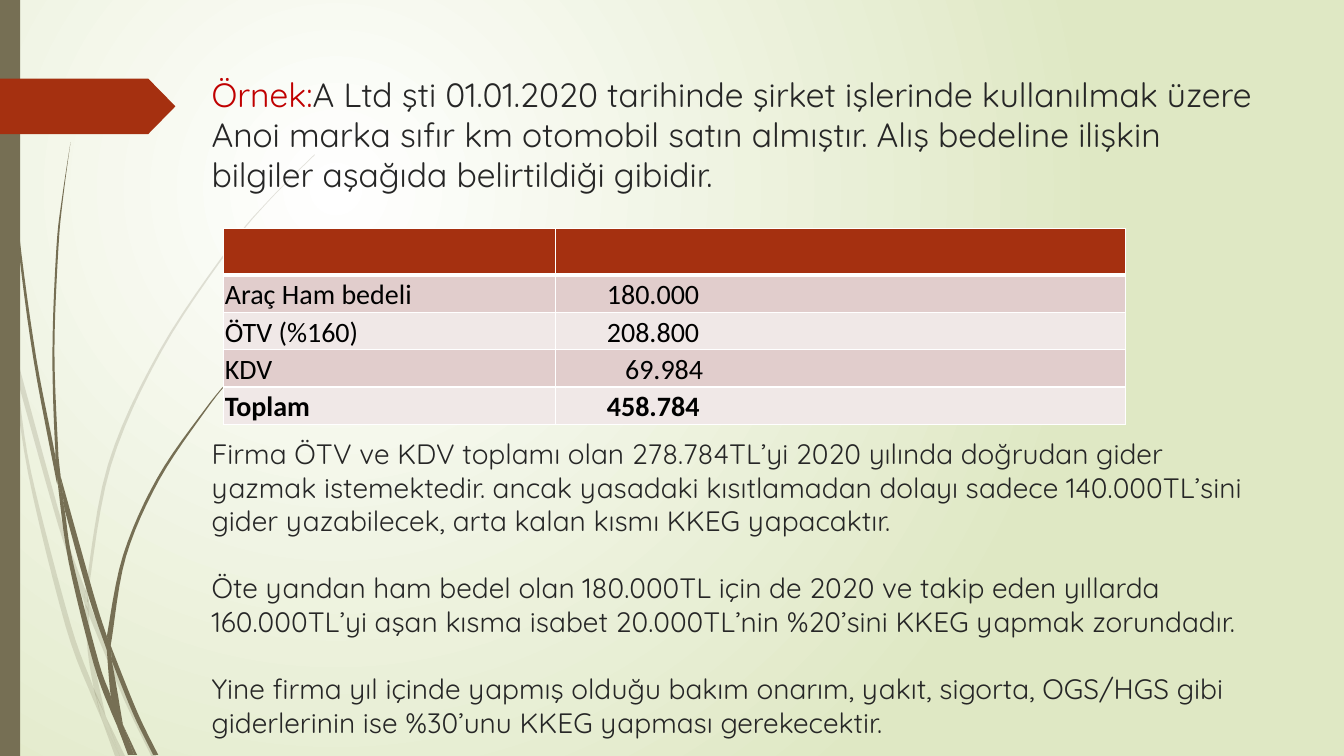
import pptx
import pptx.util
import pptx.dml.color
import pptx.enum.shapes
import pptx.enum.text
import pptx.oxml
import pptx.oxml.ns

RGB = pptx.dml.color.RGBColor
OLIVE = RGB(0x76, 0x6F, 0x54)
RUST = RGB(0xA5, 0x30, 0x10)
RED = RGB(0xC0, 0x00, 0x00)
INK = RGB(0x26, 0x26, 0x26)
BLACK = RGB(0x00, 0x00, 0x00)
BANDS = [RGB(0xE1, 0xCD, 0xCC), RGB(0xF0, 0xE8, 0xE7)]
EMU_PER_PX = 9144
WIDTH, HEIGHT = 1333, 750

# Content: size pt, line height pt, space before pt, runs
PARAGRAPHS = [
    (24, 28.8, 0, [
        ("Örnek:", RED),
        ("A Ltd şti 01.01.2020 tarihinde şirket işlerinde kullanılmak üzere "
         "Anoi marka sıfır km otomobil satın almıştır. Alış bedeline ilişkin "
         "bilgiler aşağıda belirtildiği gibidir.", INK)]),
    (20, 24, 172.8, [
        ("Firma ÖTV ve KDV toplamı olan 278.784TL’yi 2020 yılında doğrudan gider "
         "yazmak istemektedir. ancak yasadaki kısıtlamadan dolayı sadece "
         "140.000TL’sini gider yazabilecek, arta kalan kısmı KKEG yapacaktır.", INK)]),
    (20, 24, 24, [
        ("Öte yandan ham bedel olan 180.000TL için de 2020 ve takip eden yıllarda "
         "160.000TL’yi aşan kısma isabet 20.000TL’nin %20’sini KKEG yapmak "
         "zorundadır.", INK)]),
    (20, 24, 24, [
        ("Yine firma yıl içinde yapmış olduğu bakım onarım, yakıt, sigorta, OGS/HGS "
         "gibi giderlerinin ise %30’unu KKEG yapması gerekecektir.", INK)]),
]

# Label, amount, indent of the amount in px, bold
COSTS = [
    ("Araç Ham bedeli", "180.000", 51, False),
    ("ÖTV (%160)", "208.800", 51, False),
    ("KDV", "69.984", 69, False),
    ("Toplam", "458.784", 51, True),
]
COLUMN_WIDTHS = [329, 565]
HEADER_HEIGHT, ROW_HEIGHT = 46, 37

# Grass pieces: the two edges of each, as px points
PALE_GRASS = [
    ([(11, 350), (9, 322), (0, 282)], [(0, 299), (10, 344), (11, 350)]),
    ([(14, 345), (62, 520), (85, 586)], [(84, 599), (58, 522), (17, 376)]),
    ([(88, 596), (92, 607), (127, 692), (155, 750)], [(150, 750), (123, 694), (88, 610)]),
    ([(105, 711), (124, 750)], [(119, 750), (105, 711)]),
    ([(11, 350), (17, 376), (31, 469), (70, 619), (93, 683), (101, 714)],
     [(92, 693), (65, 621), (28, 470), (11, 350)]),
    ([(84, 599), (88, 608), (91, 646), (105, 711)],
     [(96, 692), (93, 683), (87, 646), (84, 599)]),
    ([(312, 153), (268, 197), (228, 244), (158, 348), (107, 461), (85, 584), (85, 586)],
     [(88, 596), (88, 584), (110, 462), (160, 349), (229, 245), (268, 198), (312, 154)]),
    ([(101, 714), (119, 750)], [(114, 750), (101, 714)]),
    ([(85, 586), (88, 596), (88, 610)], [(88, 608), (84, 599)]),
    ([(93, 683), (105, 711), (119, 750)], [(101, 714), (93, 683)]),
]
DARK_GRASS = [
    ([(4, 0), (5, 48), (8, 109), (19, 232), (36, 355), (55, 453), (57, 481)],
     [(56, 477), (33, 355), (17, 233), (7, 110), (4, 48), (3, 0)]),
    ([(60, 472), (93, 590), (106, 631)], [(106, 645), (88, 592), (64, 505)]),
    ([(110, 641), (136, 706), (157, 749)], [(152, 749), (132, 708), (111, 656)]),
    ([(57, 477), (64, 505), (72, 556), (98, 657), (110, 691), (117, 722)],
     [(111, 708), (93, 659), (68, 557), (57, 477)]),
    ([(70, 141), (62, 193), (56, 245), (52, 349), (55, 449), (60, 472)],
     [(58, 453), (54, 349), (58, 245), (63, 193), (70, 141)]),
    ([(122, 719), (136, 749)], [(133, 749), (122, 719)]),
    ([(55, 449), (60, 472), (64, 505)], [(57, 477), (55, 453)]),
    ([(260, 344), (231, 373), (204, 405), (156, 474), (122, 551), (106, 631)],
     [(110, 641), (111, 633), (125, 552), (158, 476), (205, 406), (231, 374), (261, 344)]),
    ([(117, 722), (131, 749)], [(127, 749), (117, 722)]),
    ([(106, 645), (111, 656), (122, 719)], [(116, 706), (110, 691), (106, 645)]),
    ([(106, 631), (110, 641), (111, 656)], [(106, 645), (106, 633)]),
    ([(110, 691), (122, 719), (133, 749)], [(130, 749), (117, 722), (110, 691)]),
]


def px(length):
    return pptx.util.Emu(round(length * EMU_PER_PX))


def paint(shape, color):
    shape.fill.solid()
    shape.fill.fore_color.rgb = color
    shape.line.fill.background()
    shape.shadow.inherit = False


def smooth_path(knots, steps=6):
    """Catmull-Rom curve through the knots."""
    ends = [knots[0]] + knots + [knots[-1]]
    path = []
    for a, b, c, d in zip(ends, ends[1:], ends[2:], ends[3:]):
        for step in range(steps):
            t = step / steps
            path.append(tuple(
                px((2 * q + (r - p) * t + (2 * p - 5 * q + 4 * r - s) * t ** 2
                    + (3 * q - p - 3 * r + s) * t ** 3) / 2)
                for p, q, r, s in zip(a, b, c, d)))
    return path + [tuple(px(value) for value in knots[-1])]


def add_grass(page, edges, opacity=None):
    outline = [point for edge in edges for point in smooth_path(edge)]
    builder = page.shapes.build_freeform(*outline[0], scale=1.0)
    builder.add_line_segments(outline[1:], close=True)
    grass = builder.convert_to_shape()
    paint(grass, OLIVE)
    if opacity:
        color = grass.fill._xPr.find(".//" + pptx.oxml.ns.qn("a:srgbClr"))
        color.append(pptx.oxml.parse_xml(
            f'<a:alpha {pptx.oxml.ns.nsdecls("a")} val="{opacity * 1000}"/>'))


def set_borders(cell, bottom):
    for i, (side, width) in enumerate((("L", 1), ("R", 1), ("T", 1), ("B", bottom))):
        cell._tc.get_or_add_tcPr().insert(i, pptx.oxml.parse_xml(
            f'<a:ln{side} {pptx.oxml.ns.nsdecls("a")} w="{width * 12700}">'
            f'<a:solidFill><a:srgbClr val="FFFFFF"/></a:solidFill></a:ln{side}>'))


def add_span(para, text, font, size, color, bold=False):
    span = para.add_run()
    span.text = text
    span.font.name = font
    span.font.size = pptx.util.Pt(size)
    span.font.bold = bold
    span.font.color.rgb = color


deck = pptx.Presentation()
deck.slide_width, deck.slide_height = px(WIDTH), px(HEIGHT)
page = deck.slides.add_slide(deck.slide_layouts[6])

# Background glow
page._element.cSld.insert(0, pptx.oxml.parse_xml(
    f'<p:bg {pptx.oxml.ns.nsdecls("p", "a")}><p:bgPr><a:gradFill><a:gsLst>'
    '<a:gs pos="0"><a:srgbClr val="FFFFFF"/></a:gs>'
    '<a:gs pos="100000"><a:srgbClr val="DFE8C4"/></a:gs></a:gsLst>'
    '<a:path path="circle"><a:fillToRect l="50000" t="50000" r="100000" b="100000"/>'
    '</a:path></a:gradFill><a:effectLst/></p:bgPr></p:bg>'))

# Grass, side bar and tag
for edges in PALE_GRASS:
    add_grass(page, edges, opacity=20)
for edges in DARK_GRASS:
    add_grass(page, edges)
kinds = pptx.enum.shapes.MSO_SHAPE
bar = page.shapes.add_shape(kinds.RECTANGLE, 0, 0, px(20), px(HEIGHT))
paint(bar, OLIVE)
tag = page.shapes.add_shape(kinds.PENTAGON, 0, px(78), px(174), px(55))
tag.adjustments[0] = 0.49
paint(tag, RUST)

# Text
box = page.shapes.add_textbox(px(200), px(68), px(1058), px(272))
frame = box.text_frame
frame.word_wrap = True
for i, (size, line_height, gap, spans) in enumerate(PARAGRAPHS):
    para = frame.add_paragraph() if i else frame.paragraphs[0]
    para.line_spacing = pptx.util.Pt(line_height)
    para.space_before = pptx.util.Pt(gap)
    for text, color in spans:
        add_span(para, text, "Quicksand", size, color)

# Cost table
heights = [HEADER_HEIGHT] + [ROW_HEIGHT] * len(COSTS)
table = page.shapes.add_table(len(heights), 2, px(222), px(227),
                              px(sum(COLUMN_WIDTHS)), px(sum(heights))).table
for column, width in zip(table.columns, COLUMN_WIDTHS):
    column.width = px(width)
for row, height in zip(table.rows, heights):
    row.height = px(height)
for cell in table.rows[0].cells:
    cell.fill.solid()
    cell.fill.fore_color.rgb = RUST
    set_borders(cell, bottom=3)
for i, (label, amount, indent, bold) in enumerate(COSTS):
    for cell, text, margin in zip(table.rows[i + 1].cells, (label, amount), (1, indent)):
        cell.fill.solid()
        cell.fill.fore_color.rgb = BANDS[i % 2]
        cell.vertical_anchor = pptx.enum.text.MSO_ANCHOR.BOTTOM
        cell.margin_left, cell.margin_right = px(margin), px(1)
        cell.margin_top, cell.margin_bottom = px(1), 0
        add_span(cell.text_frame.paragraphs[0], text, "Calibri", 20, BLACK, bold)
        set_borders(cell, bottom=1)

deck.save("out.pptx")
